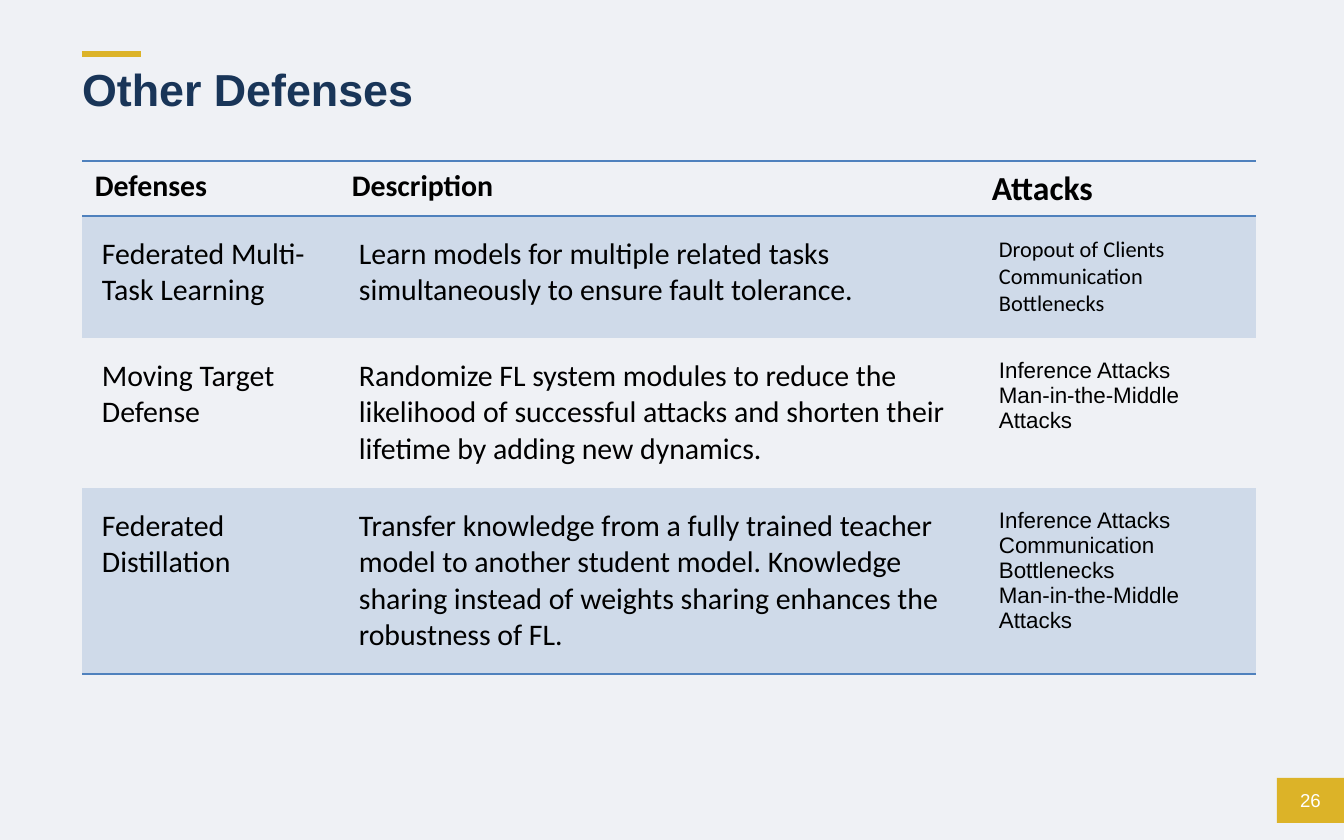
from dataclasses import dataclass

from lxml import etree
from pptx import Presentation
from pptx.dml.color import RGBColor
from pptx.enum.shapes import MSO_CONNECTOR, MSO_SHAPE
from pptx.enum.text import MSO_ANCHOR, MSO_AUTO_SIZE, PP_ALIGN
from pptx.oxml import parse_xml
from pptx.oxml.ns import nsdecls, qn
from pptx.util import Emu, Pt

BACKGROUND = RGBColor(0xEF, 0xF1, 0xF5)
GOLD = RGBColor(0xDC, 0xB3, 0x28)
NAVY = RGBColor(0x19, 0x35, 0x58)
RULE_BLUE = RGBColor(0x4F, 0x81, 0xBD)
BAND_BLUE = RGBColor(0xCF, 0xDA, 0xE9)
BLACK = RGBColor(0, 0, 0)
WHITE = RGBColor(0xFF, 0xFF, 0xFF)
PLAIN_TABLE_STYLE = "{2D5ABB26-0587-4C30-8999-92F81FD0307C}"

SLIDE_WIDTH, SLIDE_HEIGHT = 1344, 840
LEFT, TABLE_TOP = 82, 161
COLUMN_WIDTHS = (257, 640, 277)
HEADER_HEIGHT = 55


def px(length: int) -> Emu:
    return Emu(round(length * 914400 / 134.4))


@dataclass(frozen=True)
class Defense:
    name: str
    description: str
    attacks: tuple[str, ...]
    attacks_font: str
    height: int
    banded: bool


@dataclass(frozen=True)
class CellStyle:
    size: int
    font: str = "Calibri"
    bold: bool = False
    margin_x: int = 20
    margin_y: int = 20
    banded: bool = False
    rules: tuple[str, ...] = ()


DEFENSES = (
    Defense(
        "Federated Multi-Task Learning",
        "Learn models for multiple related tasks simultaneously to ensure fault tolerance.",
        ("Dropout of Clients", "Communication Bottlenecks"),
        "Calibri", 122, True,
    ),
    Defense(
        "Moving Target Defense",
        "Randomize FL system modules to reduce the likelihood of successful attacks "
        "and shorten their lifetime by adding new dynamics.",
        ("Inference Attacks", "Man-in-the-Middle Attacks"),
        "Arial", 150, False,
    ),
    Defense(
        "Federated Distillation",
        "Transfer knowledge from a fully trained teacher model to another student model. "
        "Knowledge sharing instead of weights sharing enhances the robustness of FL.",
        ("Inference Attacks", "Communication Bottlenecks", "Man-in-the-Middle Attacks"),
        "Arial", 186, True,
    ),
)


def format_font(font, name: str, size: int, color: RGBColor, bold: bool = False) -> None:
    font.name, font.size, font.bold = name, Pt(size), bold
    font.color.rgb = color


def fill_cell(cell, lines: tuple[str, ...], style: CellStyle) -> None:
    cell.margin_left = cell.margin_right = px(style.margin_x)
    cell.margin_top = cell.margin_bottom = px(style.margin_y)
    cell.text = "\n".join(lines)
    for paragraph in cell.text_frame.paragraphs:
        format_font(paragraph.font, style.font, style.size, BLACK, style.bold)
    # Borders come before the fill in the cell properties
    properties = cell._tc.get_or_add_tcPr()
    for side in style.rules:
        properties.append(parse_xml(
            f'<a:{side} {nsdecls("a")} w="{Pt(1)}"><a:solidFill>'
            f'<a:srgbClr val="{RULE_BLUE}"/></a:solidFill></a:{side}>'
        ))
    if style.banded:
        cell.fill.solid()
        cell.fill.fore_color.rgb = BAND_BLUE
    else:
        cell.fill.background()


def add_defense_table(slide) -> None:
    heights = (HEADER_HEIGHT, *(defense.height for defense in DEFENSES))
    table = slide.shapes.add_table(
        len(heights), len(COLUMN_WIDTHS), px(LEFT), px(TABLE_TOP),
        px(sum(COLUMN_WIDTHS)), px(sum(heights)),
    ).table
    table.horz_banding = False
    table._tbl.tblPr.find(qn("a:tableStyleId")).text = PLAIN_TABLE_STYLE
    for column, width in zip(table.columns, COLUMN_WIDTHS):
        column.width = px(width)
    for row, height in zip(table.rows, heights):
        row.height = px(height)

    # Header row
    for column, (heading, size) in enumerate(
        (("Defenses", 16), ("Description", 16), ("Attacks", 18))
    ):
        style = CellStyle(size, bold=True, margin_x=13, margin_y=7, rules=("lnT", "lnB"))
        fill_cell(table.cell(0, column), (heading,), style)

    # One row per defense
    for row, defense in enumerate(DEFENSES, start=1):
        rules = ("lnB",) if row == len(DEFENSES) else ()
        body = CellStyle(16, banded=defense.banded, rules=rules)
        attacks = CellStyle(12, defense.attacks_font, banded=defense.banded, rules=rules)
        fill_cell(table.cell(row, 0), (defense.name,), body)
        fill_cell(table.cell(row, 1), (defense.description,), body)
        fill_cell(table.cell(row, 2), defense.attacks, attacks)


def add_title(slide) -> None:
    accent = slide.shapes.add_connector(
        MSO_CONNECTOR.STRAIGHT, px(LEFT), px(54), px(141), px(54)
    )
    accent.line.color.rgb = GOLD
    accent.line.width = Pt(2.75)
    etree.SubElement(accent._element.spPr, qn("a:effectLst"))

    title = slide.shapes.title
    title.left, title.top, title.width, title.height = px(LEFT), px(61), px(988), px(92)
    frame = title.text_frame
    frame.text = "Other Defenses"
    frame.auto_size = MSO_AUTO_SIZE.NONE
    frame.vertical_anchor = MSO_ANCHOR.TOP
    frame.margin_left = 0
    frame.margin_right, frame.margin_top, frame.margin_bottom = px(13), px(7), px(7)
    heading = frame.paragraphs[0]
    heading.alignment = PP_ALIGN.LEFT
    heading.line_spacing = 0.9
    format_font(heading.font, "Arial", 24, NAVY, bold=True)


def add_page_number(slide) -> None:
    badge = slide.shapes.add_shape(
        MSO_SHAPE.RECTANGLE, px(1277), px(778), px(67), px(45)
    )
    badge.shadow.inherit = False
    badge.fill.solid()
    badge.fill.fore_color.rgb = GOLD
    badge.line.fill.background()
    frame = badge.text_frame
    frame.text = "26"
    frame.margin_left = frame.margin_right = 0
    frame.margin_top = frame.margin_bottom = px(5)
    frame.vertical_anchor = MSO_ANCHOR.MIDDLE
    number = frame.paragraphs[0]
    number.alignment = PP_ALIGN.CENTER
    format_font(number.font, "Arial", 10, WHITE)


def main() -> None:
    presentation = Presentation()
    presentation.slide_width = px(SLIDE_WIDTH)
    presentation.slide_height = px(SLIDE_HEIGHT)
    slide = presentation.slides.add_slide(presentation.slide_layouts[5])
    slide.background.fill.solid()
    slide.background.fill.fore_color.rgb = BACKGROUND
    add_title(slide)
    add_defense_table(slide)
    add_page_number(slide)
    presentation.save("out.pptx")


if __name__ == "__main__":
    main()
